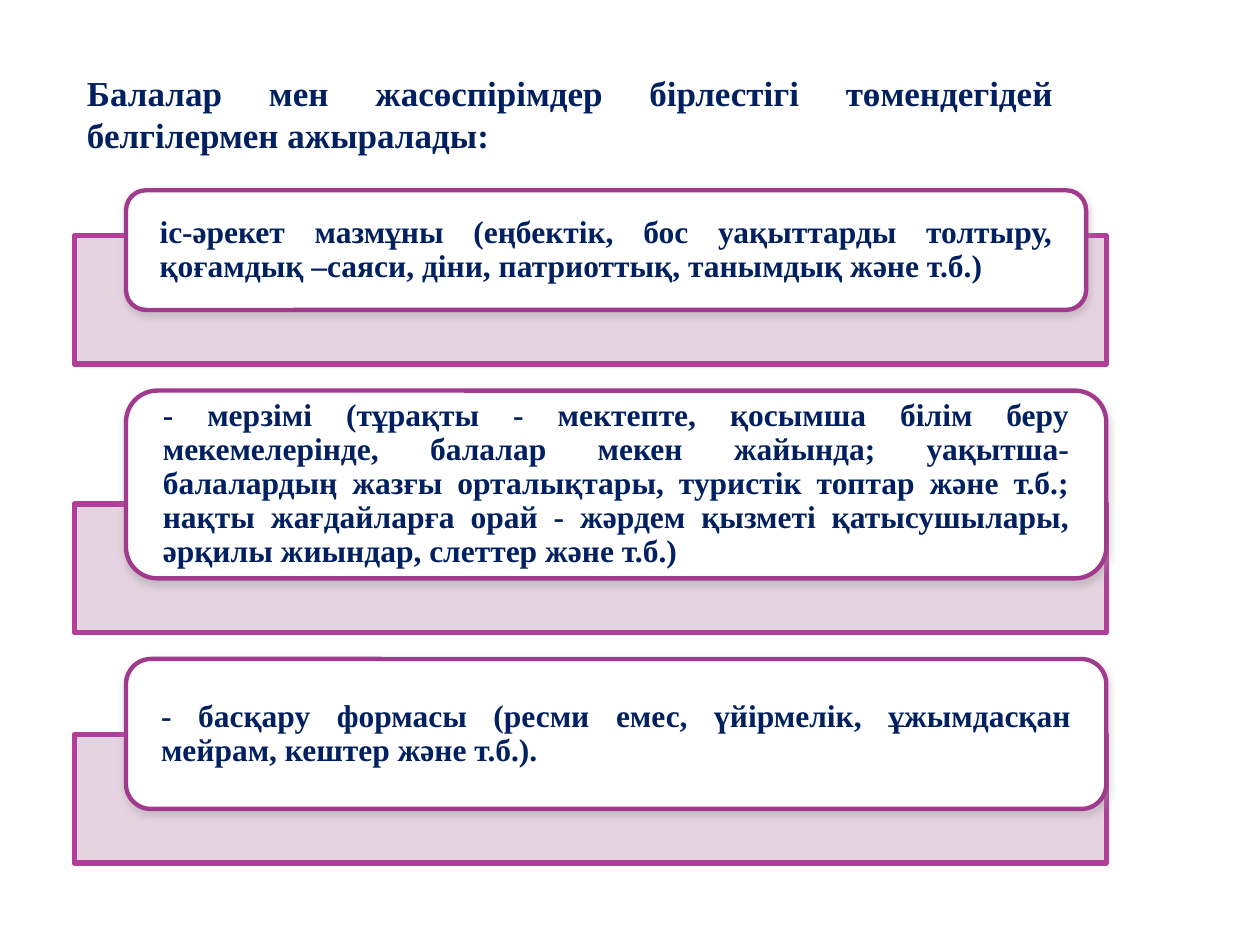
from lxml import etree
from pptx import Presentation
from pptx.dml.color import RGBColor
from pptx.enum.shapes import MSO_SHAPE as Shape
from pptx.enum.text import MSO_ANCHOR as Anchor, MSO_AUTO_SIZE as AutoSize, PP_ALIGN as Align
from pptx.oxml import parse_xml
from pptx.oxml.ns import nsdecls, qn
from pptx.util import Inches, Pt

SHADOW = (
    f'<a:effectLst {nsdecls("a")}><a:outerShdw blurRad="50800" dist="25400" dir="5400000" rotWithShape="0">'
    '<a:srgbClr val="979797"><a:alpha val="38000"/></a:srgbClr></a:outerShdw></a:effectLst>'
)


def format_text(frame, size):
    frame.word_wrap = True
    para = frame.paragraphs[0]
    para.alignment = Align.JUSTIFY
    for span in para.runs:
        span.font.name = "Times New Roman"
        span.font.size = Pt(size)
        span.font.bold = True
        span.font.color.rgb = RGBColor.from_string("002060")
    return para


def add_panel(page, kind, left, top, width, height, fill, line, weight):
    panel = page.shapes.add_shape(kind, Inches(left), Inches(top), Inches(width), Inches(height))
    panel.fill.solid()
    panel.fill.fore_color.rgb = RGBColor.from_string(fill)
    panel.line.color.rgb = RGBColor.from_string(line)
    panel.line.width = Pt(weight)
    panel.shadow.inherit = False
    return panel


deck = Presentation()
deck.slide_width, deck.slide_height = Inches(10), Inches(7.5)
page = deck.slides.add_slide(deck.slide_layouts[5])

title = page.shapes.title
title.left, title.top, title.width, title.height = Inches(0.59), Inches(0.52), Inches(7.87), Inches(0.77)
title.text_frame.text = "Балалар мен жасөспірімдер бірлестігі төмендегідей белгілермен ажыралады:"
title.text_frame.vertical_anchor = Anchor.TOP
title.text_frame.auto_size = AutoSize.NONE
format_text(title.text_frame, 20)

# Band top, card top, card width, card height, text
features = [
    (1.87, 1.51, 7.62, 0.95,
     "іс-əрекет мазмұны (еңбектік, бос уақыттарды толтыру, қоғамдық –саяси, діни, "
     "патриоттық, танымдық жəне т.б.)"),
    (4, 3.1, 7.78, 1.49,
     "- мерзімі (тұрақты - мектепте, қосымша білім беру мекемелерінде, балалар мекен "
     "жайында; уақытша- балалардың жазғы орталықтары, туристік топтар жəне т.б.; нақты "
     "жағдайларға орай - жəрдем қызметі қатысушылары, əрқилы жиындар, слеттер жəне т.б.)"),
    (5.83, 5.23, 7.78, 1.19,
     "- басқару формасы (ресми емес, үйірмелік, ұжымдасқан мейрам, кештер жəне т.б.)."),
]

for band_top, card_top, card_width, card_height, text in features:
    band = add_panel(page, Shape.RECTANGLE, 0.59, band_top, 8.19, 1.02, "E4CFDE", "B13F9A", 3.15)
    band_color = band.fill._xPr.find(qn("a:solidFill"))[0]
    etree.SubElement(band_color, qn("a:alpha"), val="90000")

    card = add_panel(page, Shape.ROUNDED_RECTANGLE, 1, card_top, card_width, card_height,
                     "FFFFFF", "A1398C", 2.5)
    properties = card._element.spPr
    properties.replace(properties.find(qn("a:effectLst")), parse_xml(SHADOW))

    frame = card.text_frame
    frame.text = text
    frame.vertical_anchor = Anchor.MIDDLE
    frame.margin_left = frame.margin_right = Inches(0.22)
    frame.margin_top = frame.margin_bottom = 0
    format_text(frame, 18).line_spacing = 0.9

deck.save("out.pptx")
